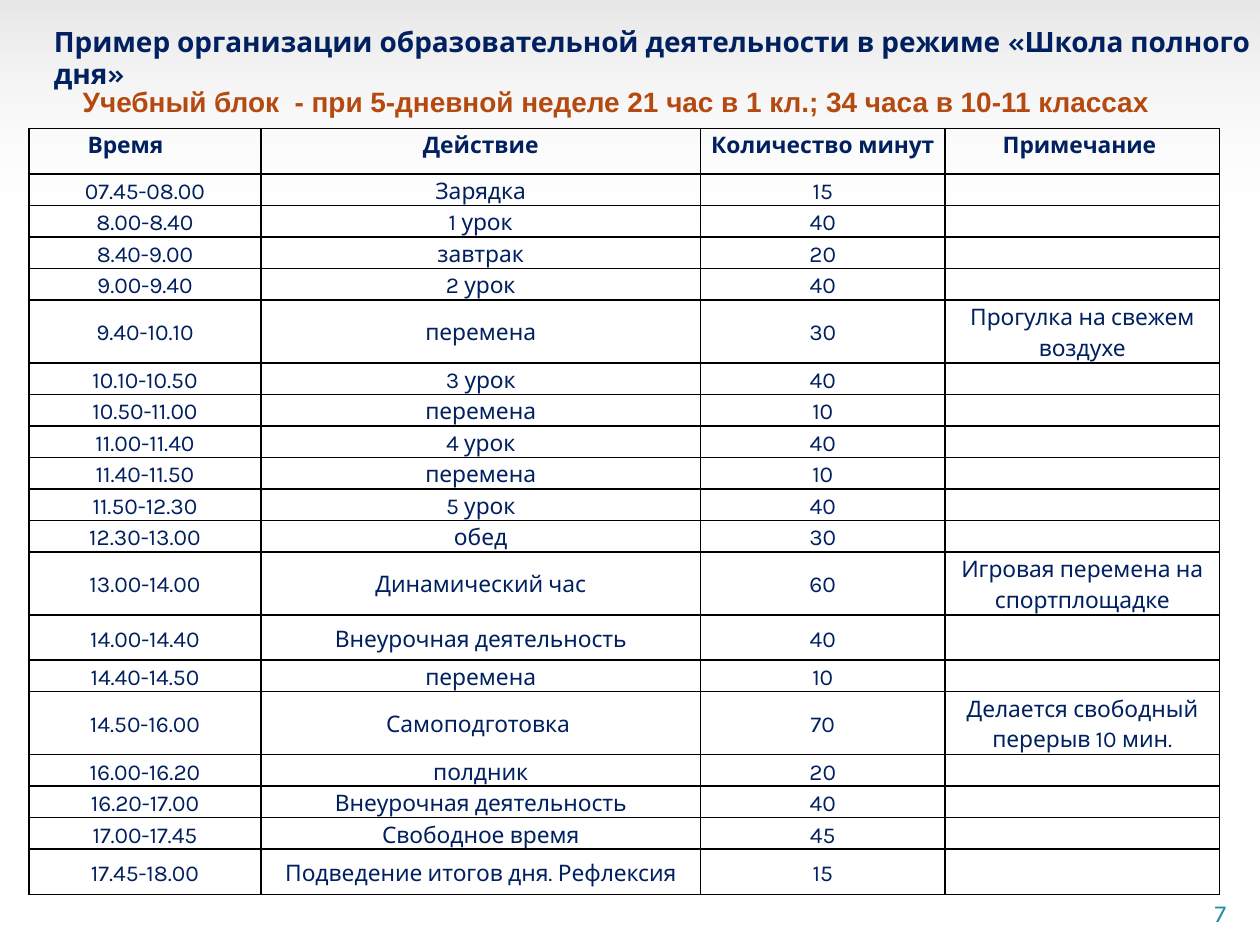
from typing import NamedTuple

from lxml import etree
from pptx import Presentation, util as u
from pptx.dml.color import RGBColor
from pptx.enum import shapes, text
from pptx.oxml.ns import qn

NAVY = RGBColor(0x00, 0x20, 0x60)
RUST = RGBColor(0xB5, 0x4A, 0x10)
TEAL = RGBColor(0x26, 0x8E, 0xA8)
BLACK = RGBColor(0x00, 0x00, 0x00)
WHITE = RGBColor(0xFF, 0xFF, 0xFF)
CENTER = text.PP_ALIGN.CENTER
SINGLE, MEDIUM, DOUBLE = 0.25, 0.36, 0.5


class Activity(NamedTuple):
    time: str
    action: str
    minutes: str
    note: str = ""
    height: float = SINGLE


class Caption(NamedTuple):
    words: str
    box: tuple[float, float, float, float]
    style: dict
    wrap: bool = True
    grow: bool = True


HEADER = Activity("Время\t", "Действие", "Количество минут", "Примечание ", MEDIUM)
SCHEDULE = [
    Activity("07.45-08.00", "Зарядка", "15"),
    Activity("8.00-8.40", "1 урок", "40"),
    Activity("8.40-9.00", "завтрак", "20"),
    Activity("9.00-9.40", "2 урок", "40"),
    Activity("9.40-10.10", "перемена", "30", "Прогулка на свежем воздухе", DOUBLE),
    Activity("10.10-10.50", "3 урок", "40"),
    Activity("10.50-11.00", "перемена", "10"),
    Activity("11.00-11.40", "4 урок", "40"),
    Activity("11.40-11.50", "перемена", "10"),
    Activity("11.50-12.30", "5 урок", "40"),
    Activity("12.30-13.00", "обед", "30"),
    Activity("13.00-14.00", "Динамический час", "60", "Игровая перемена на спортплощадке", DOUBLE),
    Activity("14.00-14.40", "Внеурочная деятельность", "40", height=MEDIUM),
    Activity("14.40-14.50", "перемена", "10"),
    Activity("14.50-16.00", "Самоподготовка ", "70", "Делается свободный перерыв 10 мин.", DOUBLE),
    Activity("16.00-16.20", "полдник", "20"),
    Activity("16.20-17.00", "Внеурочная деятельность", "40"),
    Activity("17.00-17.45", "Свободное время", "45"),
    Activity("17.45-18.00", "Подведение итогов дня. Рефлексия", "15", height=MEDIUM),
]
COLUMN_WIDTHS = [1.84, 3.49, 1.94, 2.18]
CAPTIONS = [
    Caption("7", (0.51, 7.08, 9.32, 0.27),
            dict(size=14, color=TEAL, align=text.PP_ALIGN.RIGHT), grow=False),
    Caption("Пример организации образовательной деятельности в режиме «Школа полного дня»",
            (0.23, 0.16, 9.92, 0.36), dict(size=16, bold=True, spacing=0.96, indent=0.1)),
    Caption("Учебный блок  - при 5-дневной неделе 21 час в 1 кл.; 34 часа в 10-11 классах",
            (0.47, 0.62, 8.84, 0.37),
            dict(size=16, bold=True, font="Arial", color=RUST, align=CENTER), wrap=False),
]


def write_text(frame, words: str, *, size: float, font: str = "Karla",
               color: RGBColor = NAVY, bold: bool = False, align=None,
               spacing: float | None = None, indent: float = 0) -> None:
    paragraph = frame.paragraphs[0]
    paragraph.alignment = align
    paragraph.line_spacing = spacing
    properties = paragraph._p.get_or_add_pPr()
    if indent:
        properties.set("marL", str(u.Inches(indent)))
    if "\t" in words:
        tabs = etree.SubElement(properties, qn("a:tabLst"))
        etree.SubElement(tabs, qn("a:tab"), pos=str(u.Inches(0.91)), algn="l")
    if not words:
        etree.SubElement(paragraph._p, qn("a:endParaRPr"), sz=str(size * 100))
        return
    run = paragraph.add_run()
    run.text = words
    run.font.size = u.Pt(size)
    run.font.name = font
    run.font.bold = bold
    run.font.color.rgb = color


def add_top_shade(slide) -> None:
    shape = slide.shapes.add_shape(shapes.MSO_SHAPE.RECTANGLE, 0, 0, u.Inches(10), u.Inches(1.88))
    shape.shadow.inherit = False
    shape.line.fill.background()
    shape.fill.gradient()
    shape.fill.gradient_angle = 270
    for stop, color, position, opacity in zip(
            shape.fill.gradient_stops, (BLACK, WHITE), (0, 1), (10, 0)):
        stop.color.rgb = color
        stop.position = position
        tone = shape._element.spPr.findall(".//" + qn("a:srgbClr"))[-1 if position else 0]
        etree.SubElement(tone, qn("a:alpha"), val=str(opacity * 1000))


def add_caption(slide, caption: Caption) -> None:
    frame = slide.shapes.add_textbox(*map(u.Inches, caption.box)).text_frame
    frame.word_wrap = caption.wrap
    if caption.grow:
        frame.auto_size = text.MSO_AUTO_SIZE.SHAPE_TO_FIT_TEXT
    write_text(frame, caption.words, **caption.style)


def add_borders(cell) -> None:
    properties = cell._tc.get_or_add_tcPr()
    for side in ("lnL", "lnR", "lnT", "lnB"):
        line = etree.SubElement(properties, qn(f"a:{side}"), w=str(u.Pt(1)))
        fill = etree.SubElement(line, qn("a:solidFill"))
        etree.SubElement(fill, qn("a:srgbClr"), val=str(BLACK))


def add_schedule(slide, activities: list[Activity]) -> None:
    height = sum(activity.height for activity in activities)
    table = slide.shapes.add_table(
        len(activities), len(COLUMN_WIDTHS), u.Inches(0.23), u.Inches(1.02),
        u.Inches(sum(COLUMN_WIDTHS)), u.Inches(height)).table
    table.first_row = table.horz_banding = False
    for column, width in zip(table.columns, COLUMN_WIDTHS):
        column.width = u.Inches(width)
    for row, activity in zip(table.rows, activities):
        is_header = activity is HEADER
        row.height = u.Inches(activity.height)
        for cell, words in zip(row.cells, activity[:4]):
            cell.margin_left = cell.margin_right = u.Inches(0.06)
            cell.margin_top = cell.margin_bottom = 0
            cell.vertical_anchor = text.MSO_ANCHOR.TOP if is_header else text.MSO_ANCHOR.MIDDLE
            add_borders(cell)
            cell.fill.background()
            write_text(cell.text_frame, words, size=13, bold=is_header, align=CENTER, spacing=1.15)


def main() -> None:
    presentation = Presentation()
    presentation.slide_width = u.Inches(10)
    presentation.slide_height = u.Inches(7.5)
    slide = presentation.slides.add_slide(presentation.slide_layouts[6])
    slide.background.fill.solid()
    slide.background.fill.fore_color.rgb = WHITE
    add_top_shade(slide)
    page_number, title, subtitle = CAPTIONS
    add_caption(slide, page_number)
    add_caption(slide, title)
    add_schedule(slide, [HEADER, *SCHEDULE])
    add_caption(slide, subtitle)
    presentation.save("out.pptx")


if __name__ == "__main__":
    main()
